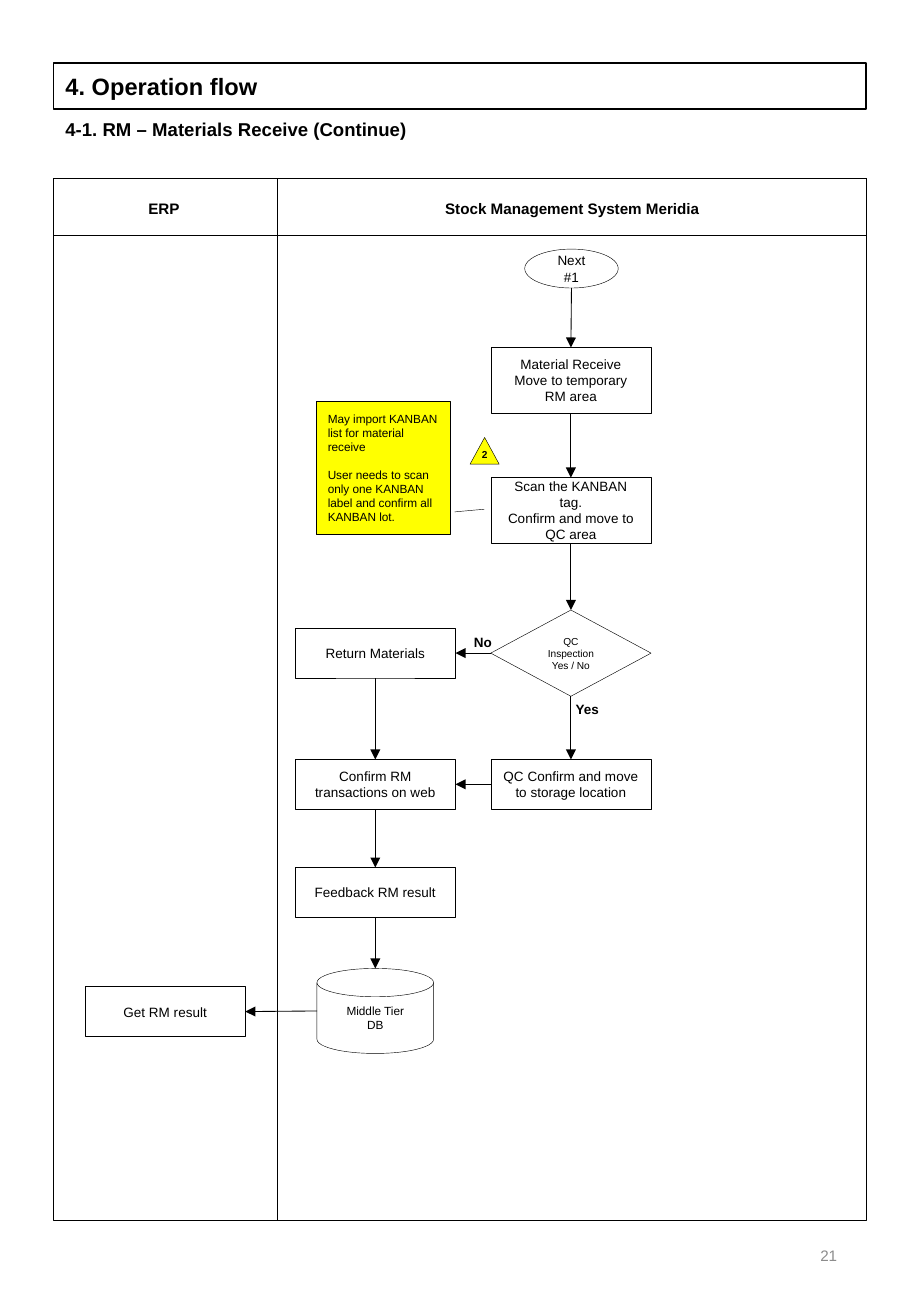
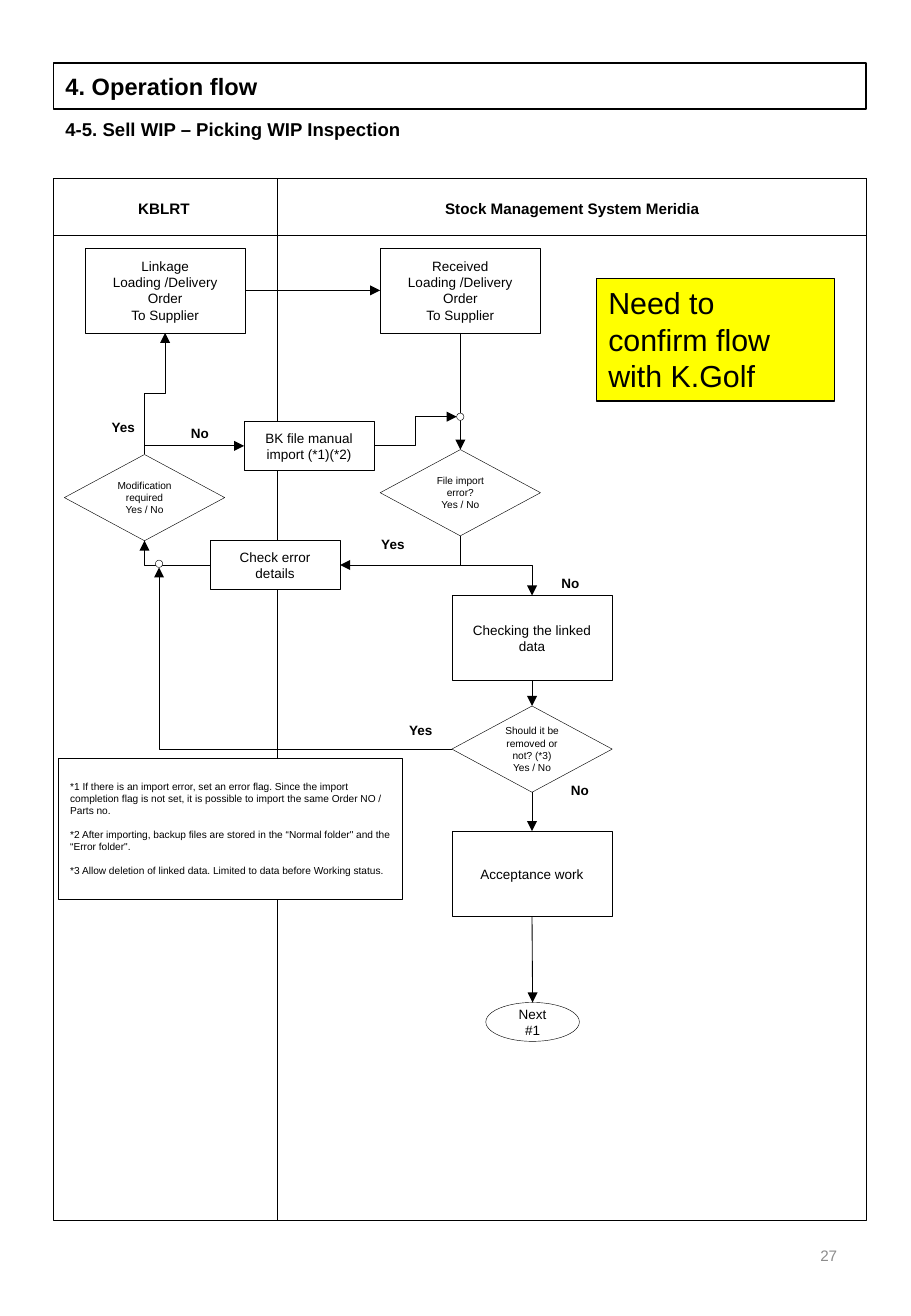
from lxml import etree
from pptx import Presentation
from pptx.dml.color import RGBColor
from pptx.enum.shapes import MSO_CONNECTOR, MSO_SHAPE
from pptx.enum.text import MSO_ANCHOR, PP_ALIGN
from pptx.oxml.ns import qn
from pptx.util import Inches, Pt

RECT = MSO_SHAPE.RECTANGLE
OVAL = MSO_SHAPE.OVAL
DECISION = MSO_SHAPE.FLOWCHART_DECISION
DISK = MSO_SHAPE.FLOWCHART_MAGNETIC_DISK
TRIANGLE = MSO_SHAPE.ISOSCELES_TRIANGLE
CALLOUT = MSO_SHAPE.LINE_CALLOUT_1
STRAIGHT, ELBOW = MSO_CONNECTOR.STRAIGHT, MSO_CONNECTOR.ELBOW
LEFT, CENTER, RIGHT = PP_ALIGN.LEFT, PP_ALIGN.CENTER, PP_ALIGN.RIGHT
MIDDLE, TOP = MSO_ANCHOR.MIDDLE, MSO_ANCHOR.TOP

NORTH, WEST, SOUTH, EAST = range(4)
JOINABLE = (RECT, DECISION)
FONT = "Arial"
COLORS = {"ink": "000000", "paper": "FFFFFF", "note": "FFFF00", "page": "8C8C8C"}
SYSTEM = "Stock Management System Meridia"
STEP_W = 1.32
DECISION_H = 0.71


def rgb(name):
    return RGBColor.from_string(COLORS[name])


def write(shape, lines, size, bold=False, align=CENTER, anchor=MIDDLE,
          color="ink", gap=0):
    frame = shape.text_frame
    frame.word_wrap = True
    frame.vertical_anchor = anchor
    for index, line in enumerate(lines):
        paragraph = frame.paragraphs[0] if index == 0 else frame.add_paragraph()
        paragraph.alignment = align
        if index:
            paragraph.space_before = Pt(gap)
        run = paragraph.add_run()
        run.text = line
        run.font.name = FONT
        run.font.size = Pt(size)
        run.font.bold = bold
        run.font.color.rgb = rgb(color)


def add_text(slide, box, text, size, **style):
    write(slide.shapes.add_textbox(*map(Inches, box)), [text], size, **style)


def add_block(slide, kind, box, lines=(), size=8, fill=None, width=0.25, **style):
    shape = slide.shapes.add_shape(kind, *map(Inches, box))
    shape.shadow.inherit = False
    if fill:
        shape.fill.solid()
        shape.fill.fore_color.rgb = rgb(fill)
    else:
        shape.fill.background()
    shape.line.color.rgb = rgb("ink")
    shape.line.width = Pt(width)
    write(shape, lines, size, **style)
    return shape


def add_step(slide, left, top, height, *lines):
    return add_block(slide, RECT, (left, top, STEP_W, height), lines)


def add_decision(slide, left, top, question):
    return add_block(slide, DECISION, (left, top, STEP_W, DECISION_H),
                     [question, "Yes / No"], 6)


def add_file_step(slide, left, top, text):
    return add_block(slide, RECT, (left, top, 1.07, 0.4), [text], fill="paper")


def add_next(slide, left, top):
    return add_block(slide, OVAL, (left, top, 0.77, 0.32), ["Next #1"])


def add_joint(slide, left, top):
    return add_block(slide, OVAL, (left, top, 0.06, 0.06), fill="paper")


def add_answer(slide, left, top, text):
    add_text(slide, (left, top, 0.51, 0.23), text, 8, bold=True)


def style_line(connector, arrow=True):
    connector.line.color.rgb = rgb("ink")
    connector.line.width = Pt(0.5)
    properties = connector._element.spPr
    if arrow:
        etree.SubElement(properties.find(qn("a:ln")), qn("a:tailEnd"), type="triangle")
    etree.SubElement(properties, qn("a:effectLst"))


def side_point(shape, side):
    across, down = {NORTH: (1, 0), WEST: (0, 1), SOUTH: (1, 2), EAST: (2, 1)}[side]
    return (shape.left + shape.width * across // 2,
            shape.top + shape.height * down // 2)


def link(slide, source, source_side, target, target_side):
    connector = slide.shapes.add_connector(
        STRAIGHT, *side_point(source, source_side), *side_point(target, target_side))
    if source.auto_shape_type in JOINABLE:
        connector.begin_connect(source, source_side)
    if target.auto_shape_type in JOINABLE:
        connector.end_connect(target, target_side)
    style_line(connector)


def link_bent(slide, source, source_side, target, target_side):
    x1, y1 = side_point(source, source_side)
    x2, y2 = side_point(target, target_side)
    starts_vertical = source_side in (NORTH, SOUTH)
    if starts_vertical:
        mid_x, mid_y = (x1 + x2) // 2, (y1 + y2) // 2
        half_x, half_y = (x2 - x1) // 2, (y2 - y1) // 2
        x1, x2 = mid_x - half_y, mid_x + half_y
        y1, y2 = mid_y + half_x, mid_y - half_x
    connector = slide.shapes.add_connector(ELBOW, x1, y1, x2, y2)
    properties = connector._element.spPr
    if starts_vertical:
        properties.find(qn("a:xfrm")).set("rot", "5400000")
    if source_side % 2 != target_side % 2:
        properties.find(qn("a:prstGeom")).set("prst", "bentConnector2")
    style_line(connector)


def add_flow_slide(deck, subtitle, partner, page):
    slide = deck.slides.add_slide(deck.slide_layouts[6])
    add_text(slide, (5.3, 10.04, 1.69, 0.58), page, 9, align=RIGHT, color="page")
    add_block(slide, RECT, (0.44, 0.52, 6.69, 0.38), ["4. Operation flow"], 14,
              width=1, bold=True, align=LEFT)
    add_text(slide, (0.44, 0.92, 6.69, 0.29), subtitle, 11,
             bold=True, align=LEFT, anchor=TOP)
    for height in (8.57, 0.47):
        add_block(slide, RECT, (0.44, 1.47, 6.69, height))
    add_text(slide, (0.43, 1.48, 1.84, 0.47), partner, 9, bold=True)
    add_text(slide, (2.29, 1.48, 4.84, 0.47), SYSTEM, 9, bold=True)
    divider = slide.shapes.add_connector(
        STRAIGHT, *map(Inches, (2.28, 1.47, 2.28, 10.04)))
    style_line(divider, arrow=False)
    return slide


def build_receive(deck):
    slide = add_flow_slide(deck, "4-1. RM – Materials Receive (Continue)", "ERP", "21")
    start = add_next(slide, 4.32, 2.05)
    receive = add_step(slide, 4.04, 2.86, 0.54,
                       "Material Receive", "Move to temporary RM area")
    scan = add_step(slide, 4.04, 3.93, 0.54,
                    "Scan the KANBAN tag.", "Confirm and move to QC area")
    inspection = add_decision(slide, 4.04, 5.02, "QC Inspection")
    returned = add_step(slide, 2.43, 5.17, 0.41, "Return Materials")
    storage = add_step(slide, 4.04, 6.25, 0.41,
                       "QC Confirm and move to storage location")
    confirm = add_step(slide, 2.43, 6.25, 0.41, "Confirm RM transactions on web")
    feedback = add_step(slide, 2.43, 7.14, 0.41, "Feedback RM result")
    database = add_block(slide, DISK, (2.61, 7.97, 0.96, 0.7), ["Middle Tier", "DB"], 7)
    result = add_step(slide, 0.7, 8.12, 0.41, "Get RM result")

    for source, target in ((start, receive), (receive, scan), (scan, inspection),
                           (inspection, storage), (returned, confirm),
                           (confirm, feedback), (feedback, database)):
        link(slide, source, SOUTH, target, NORTH)
    for source, target in ((inspection, returned), (storage, confirm),
                           (database, result)):
        link(slide, source, WEST, target, EAST)

    add_answer(slide, 4.58, 5.72, "Yes")
    add_answer(slide, 3.72, 5.17, "No")
    kanban_note = add_block(
        slide, CALLOUT, (2.6, 3.3, 1.11, 1.1),
        ["May import KANBAN list for material receive",
         "User needs to scan only one KANBAN label and confirm all KANBAN lot."],
        7, fill="note", align=LEFT, gap=8)
    for index, value in enumerate((0.83, 1.03, 0.81, 1.25)):
        kanban_note.adjustments[index] = value
    marker = add_block(slide, TRIANGLE, (3.87, 3.6, 0.24, 0.22), ["2"], 6,
                       fill="note", bold=True)
    marker.text_frame.margin_top = 0


def build_picking(deck):
    slide = add_flow_slide(deck, "4-5. Sell WIP – Picking WIP Inspection", "KBLRT", "27")
    order = ("Loading /Delivery Order", "To Supplier")
    linkage = add_step(slide, 0.7, 2.04, 0.7, "Linkage", *order)
    received = add_step(slide, 3.13, 2.04, 0.7, "Received", *order)
    import_error = add_decision(slide, 3.13, 3.7, "File import error?")
    modification = add_decision(slide, 0.53, 3.74, "Modification required")
    manual_import = add_file_step(slide, 2.01, 3.47, "BK file manual import (*1)(*2)")
    check_error = add_file_step(slide, 1.73, 4.45, "Check error details")
    checking = add_step(slide, 3.72, 4.9, 0.7, "Checking the linked data")
    removal = add_decision(slide, 3.72, 5.81, "Should it be removed or not? (*3)")
    acceptance = add_step(slide, 3.72, 6.84, 0.7, "Acceptance work")
    following = add_next(slide, 4, 8.25)

    link(slide, linkage, EAST, received, WEST)
    for source, target in ((received, import_error), (checking, removal),
                           (removal, acceptance), (acceptance, following)):
        link(slide, source, SOUTH, target, NORTH)
    link_bent(slide, check_error, WEST, modification, SOUTH)

    import_joint = add_joint(slide, 3.76, 3.4)
    error_joint = add_joint(slide, 1.28, 4.61)
    for route in ((import_error, SOUTH, check_error, EAST),
                  (import_error, SOUTH, checking, NORTH),
                  (modification, NORTH, manual_import, WEST),
                  (modification, NORTH, linkage, SOUTH),
                  (manual_import, EAST, import_joint, WEST),
                  (removal, WEST, error_joint, SOUTH)):
        link_bent(slide, *route)

    for left, top, text in ((2.98, 4.36, "Yes"), (4.44, 4.68, "No"),
                            (0.76, 3.4, "Yes"), (1.39, 3.45, "No"),
                            (3.21, 5.89, "Yes"), (4.52, 6.39, "No")):
        add_answer(slide, left, top, text)
    add_block(slide, RECT, (0.48, 6.24, 2.83, 1.16), [
        "*1 If there is an import error, set an error flag. Since the import "
        "completion flag is not set, it is possible to import the same Order NO / "
        "Parts no.",
        "*2 After importing, backup files are stored in the “Normal folder\" and "
        "the “Error folder\".",
        "*3 Allow deletion of linked data. Limited to data before Working status.",
    ], 6, fill="paper", align=LEFT, gap=7)
    add_block(slide, RECT, (4.91, 2.29, 1.96, 1.01),
              ["Need to confirm flow with K.Golf"], 18,
              fill="note", width=0.75, align=LEFT, anchor=TOP)


def main():
    deck = Presentation()
    deck.slide_width = Inches(7.5)
    deck.slide_height = Inches(10.83)
    build_receive(deck)
    build_picking(deck)
    deck.save("out.pptx")


if __name__ == "__main__":
    main()
